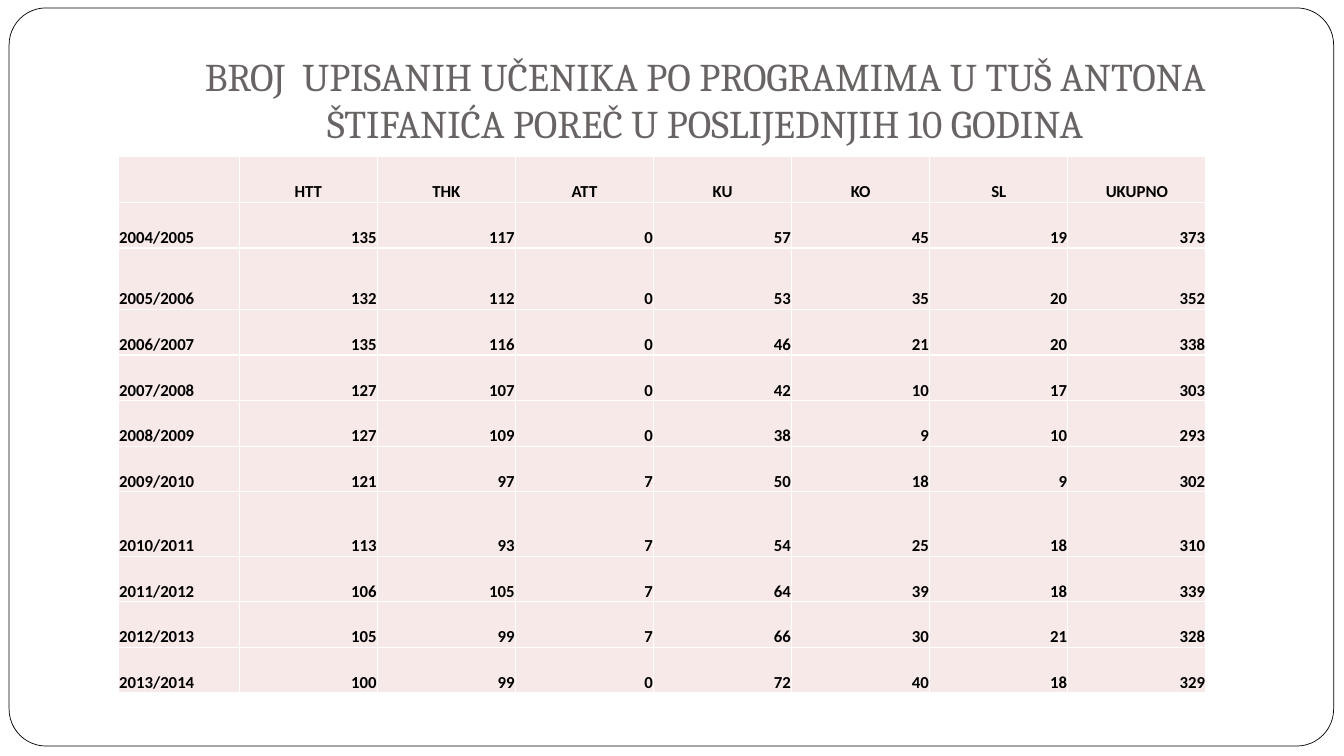
from dataclasses import dataclass

from lxml.etree import SubElement
from pptx import Presentation
from pptx.dml.color import RGBColor
from pptx.enum.shapes import MSO_SHAPE
from pptx.enum.text import MSO_ANCHOR, PP_ALIGN
from pptx.oxml.ns import qn
from pptx.slide import Slide
from pptx.table import _Cell
from pptx.text.text import TextFrame
from pptx.util import Cm, Pt


@dataclass(frozen=True)
class Theme:
    white: str = "FFFFFF"
    black: str = "000000"
    title: str = "696464"
    cell: str = "F7E9E8"
    title_font: str = "Cambria"
    table_font: str = "Calibri"
    title_size: float = 28
    table_size: float = 12
    frame_line: float = 0.5
    border: float = 1


@dataclass(frozen=True)
class SchoolYear:
    name: str
    counts: tuple[int, ...]
    height: float = 1.15


THEME = Theme()
TITLE = ("BROJ  UPISANIH UČENIKA PO PROGRAMIMA U TUŠ ANTONA ŠTIFANIĆA "
         "POREČ U POSLIJEDNJIH 10 GODINA")
PROGRAMS = ("HTT", "THK", "ATT", "KU", "KO", "SL", "UKUPNO")
YEARS = (
    SchoolYear("2004/2005", (135, 117, 0, 57, 45, 19, 373)),
    SchoolYear("2005/2006", (132, 112, 0, 53, 35, 20, 352), 1.55),
    SchoolYear("2006/2007", (135, 116, 0, 46, 21, 20, 338)),
    SchoolYear("2007/2008", (127, 107, 0, 42, 10, 17, 303)),
    SchoolYear("2008/2009", (127, 109, 0, 38, 9, 10, 293)),
    SchoolYear("2009/2010", (121, 97, 7, 50, 18, 9, 302)),
    SchoolYear("2010/2011", (113, 93, 7, 54, 25, 18, 310), 1.62),
    SchoolYear("2011/2012", (106, 105, 7, 64, 39, 18, 339)),
    SchoolYear("2012/2013", (105, 99, 7, 66, 30, 21, 328)),
    SchoolYear("2013/2014", (100, 99, 0, 72, 40, 18, 329)),
)
HEADER_HEIGHT = 1.15
YEAR_WIDTH, COUNT_WIDTH = 3.05, 3.48


def write(tf: TextFrame, text: str, *, font: str, size: float, color: str,
          bold: bool = False, align: PP_ALIGN = PP_ALIGN.LEFT) -> None:
    p = tf.paragraphs[0]
    p.alignment = align
    r = p.add_run()
    r.text = text
    r.font.name, r.font.size, r.font.bold = font, Pt(size), bold
    r.font.color.rgb = RGBColor.from_string(color)


def add_frame(slide: Slide) -> None:
    sp = slide.shapes.add_shape(MSO_SHAPE.ROUNDED_RECTANGLE,
                                Cm(0.23), Cm(0.2), Cm(33.38), Cm(18.6))
    sp.adjustments[0] = 0.05
    sp.shadow.inherit = False
    sp.fill.solid()
    sp.fill.fore_color.rgb = RGBColor.from_string(THEME.white)
    sp.line.color.rgb = RGBColor.from_string(THEME.black)
    sp.line.width = Pt(THEME.frame_line)


def add_title(slide: Slide) -> None:
    tf = slide.shapes.add_textbox(Cm(3.38), Cm(0.76), Cm(28.78), Cm(3.18)).text_frame
    tf.word_wrap = True
    tf.vertical_anchor = MSO_ANCHOR.BOTTOM
    tf.margin_bottom = Cm(0.25)
    write(tf, TITLE, font=THEME.title_font, size=THEME.title_size,
          color=THEME.title, align=PP_ALIGN.CENTER)


def style_cell(cell: _Cell) -> None:
    # Borders come before the fill in the cell properties
    tc_pr = cell._tc.get_or_add_tcPr()
    for side in ("a:lnL", "a:lnR", "a:lnT", "a:lnB"):
        ln = SubElement(tc_pr, qn(side), w=str(Pt(THEME.border)))
        SubElement(SubElement(ln, qn("a:solidFill")), qn("a:srgbClr"), val=THEME.white)
    cell.fill.solid()
    cell.fill.fore_color.rgb = RGBColor.from_string(THEME.cell)
    cell.vertical_anchor = MSO_ANCHOR.BOTTOM
    cell.margin_left = cell.margin_right = cell.margin_top = Cm(0.02)
    cell.margin_bottom = 0


def add_enrolment_table(slide: Slide) -> None:
    rows = [("", *PROGRAMS)] + [(y.name, *map(str, y.counts)) for y in YEARS]
    heights = [HEADER_HEIGHT] + [y.height for y in YEARS]
    widths = [YEAR_WIDTH] + [COUNT_WIDTH] * len(PROGRAMS)
    table = slide.shapes.add_table(len(rows), len(widths), Cm(2.98), Cm(3.95),
                                   Cm(sum(widths)), Cm(sum(heights))).table
    table.first_row = table.horz_banding = False
    for column, width in zip(table.columns, widths):
        column.width = Cm(width)
    for i, (values, height) in enumerate(zip(rows, heights)):
        table.rows[i].height = Cm(height)
        for j, text in enumerate(values):
            cell = table.cell(i, j)
            style_cell(cell)
            if not text:
                continue
            if i == 0:
                align = PP_ALIGN.CENTER
            else:
                align = PP_ALIGN.RIGHT if j else PP_ALIGN.LEFT
            write(cell.text_frame, text, font=THEME.table_font,
                  size=THEME.table_size, color=THEME.black, bold=True, align=align)


def main() -> None:
    prs = Presentation()
    prs.slide_width, prs.slide_height = Cm(33.87), Cm(19.05)
    slide = prs.slides.add_slide(prs.slide_layouts[6])
    add_frame(slide)
    add_enrolment_table(slide)
    add_title(slide)
    prs.save("out.pptx")


if __name__ == "__main__":
    main()
